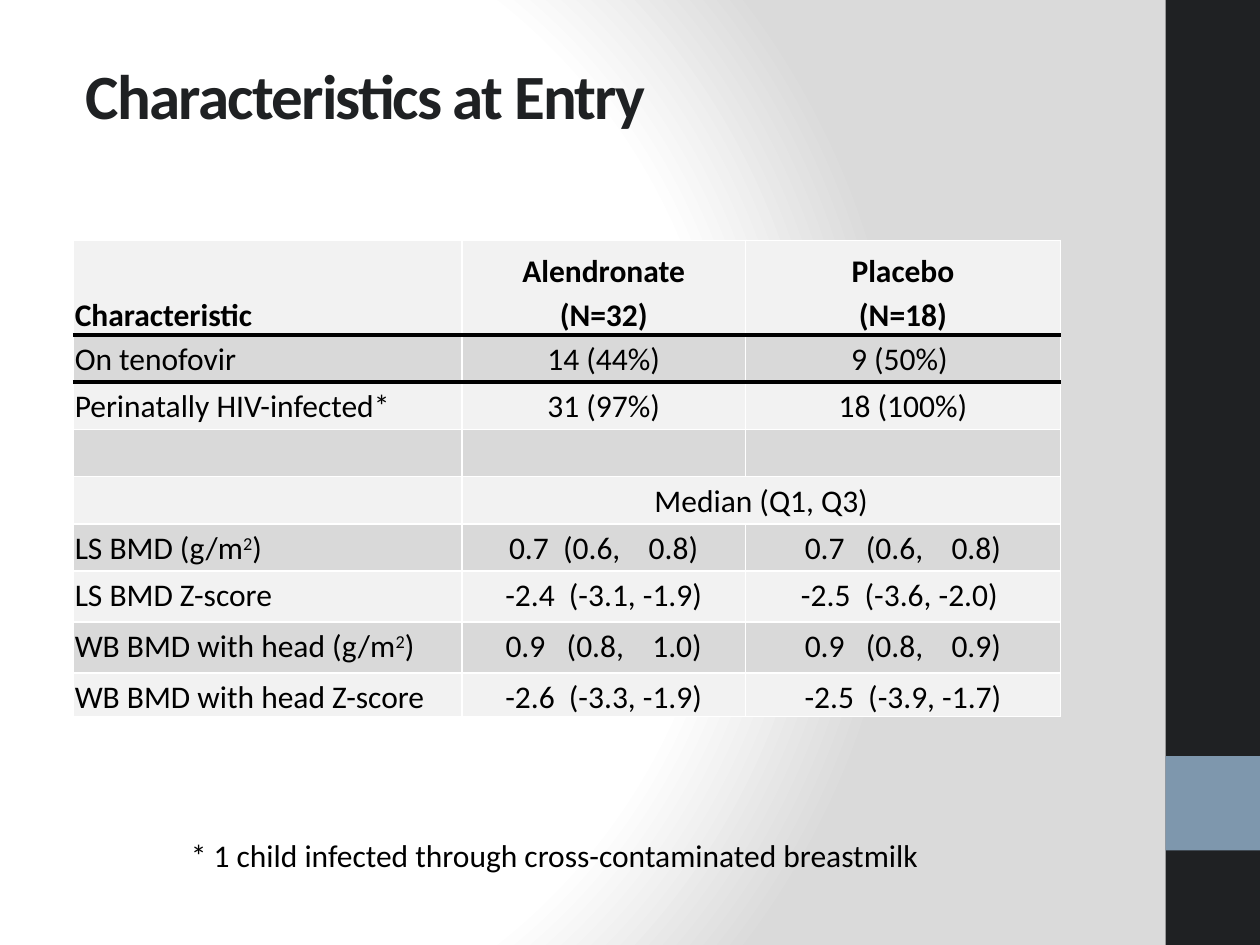
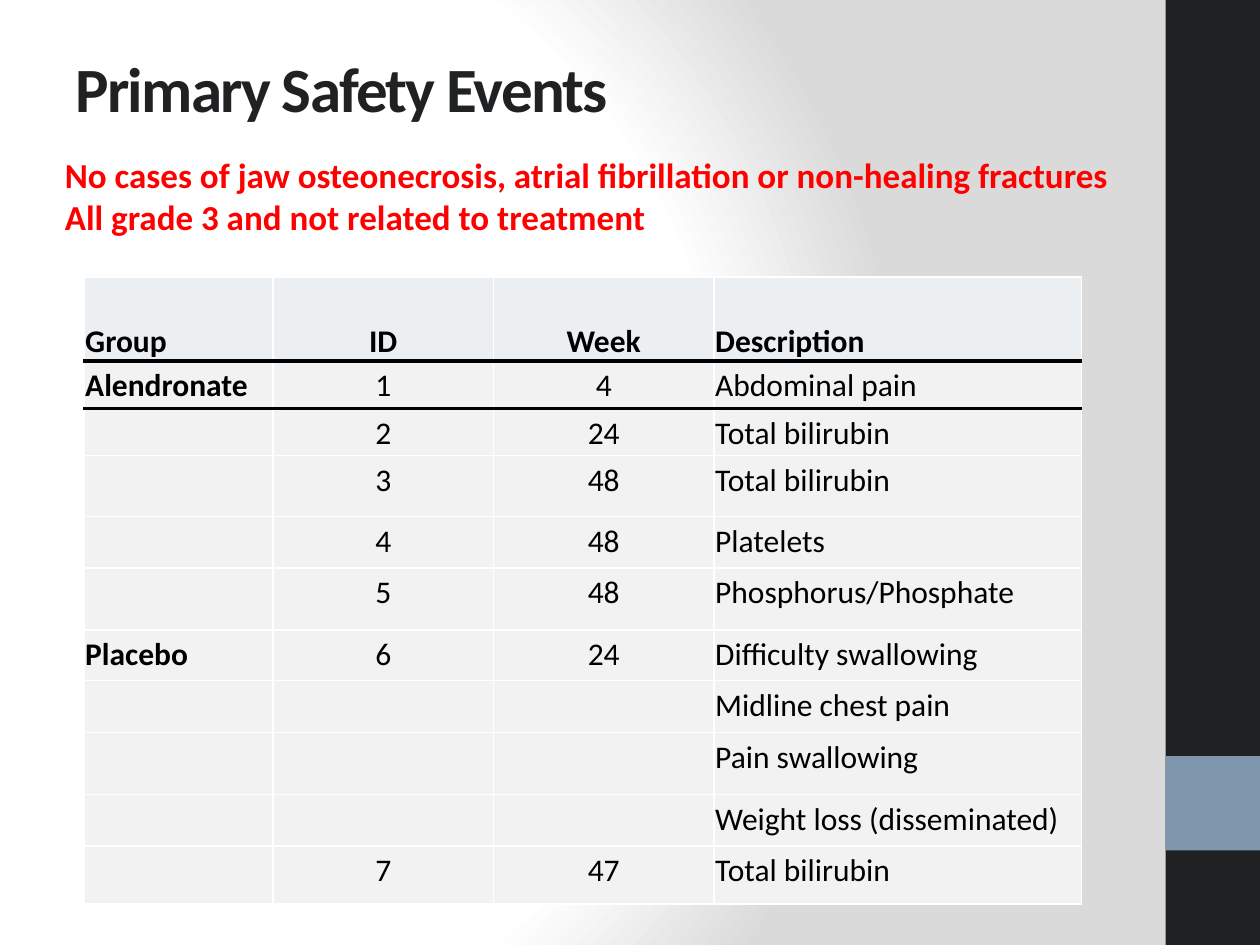
import pptx
import pptx.dml.color
import pptx.enum.shapes
import pptx.enum.text
import pptx.oxml
import pptx.oxml.ns
import pptx.util

RGB = pptx.dml.color.RGBColor
ALIGN = pptx.enum.text.PP_ALIGN
ANCHOR = pptx.enum.text.MSO_ANCHOR

INK = RGB(0x1F, 0x21, 0x23)
STEEL = RGB(0x7E, 0x97, 0xAD)
WHITE = RGB(0xFF, 0xFF, 0xFF)
BLACK = RGB(0x00, 0x00, 0x00)
RED = RGB(0xFF, 0x00, 0x00)
SILVER = RGB(0xDA, 0xDA, 0xDA)
LIGHT_BAND = RGB(0xF2, 0xF2, 0xF2)
DARK_BAND = RGB(0xD9, 0xD9, 0xD9)
PALE_HEADER = RGB(0xEC, 0xEF, 0xF1)

FONT = "Calibri"
GRID_COLUMNS, GRID_ROWS = 120, 90
UNIT = pptx.util.Inches(10) // GRID_COLUMNS

ENTRY_ROWS = [
    ("Characteristic", "Alendronate\n(N=32)", "Placebo\n(N=18)"),
    ("On tenofovir", "14 (44%)", "9 (50%) "),
    ("Perinatally HIV-infected*", "31 (97%)", "18 (100%)"),
    ("", "", ""),
    ("", "Median (Q1, Q3)", ""),
    ("LS BMD (g/m^2^)", "0.7  (0.6,    0.8)", "0.7   (0.6,    0.8)"),
    ("LS BMD Z-score", "-2.4  (-3.1, -1.9)", "-2.5  (-3.6, -2.0) "),
    ("WB BMD with head (g/m^2^)", "0.9   (0.8,    1.0)", "0.9   (0.8,    0.9)"),
    ("WB BMD with head Z-score", "-2.6  (-3.3, -1.9)", "-2.5  (-3.9, -1.7)"),
]

EVENT_ROWS = [
    ("Group", "ID", "Week", "Description"),
    ("Alendronate", "1", "4", "Abdominal pain"),
    ("", "2", "24", "Total bilirubin"),
    ("", "3", "48", "Total bilirubin"),
    ("", "4", "48", "Platelets"),
    ("", "5", "48", "Phosphorus/Phosphate"),
    ("Placebo", "6", "24", "Difficulty swallowing"),
    ("", "", "", "Midline chest pain"),
    ("", "", "", "Pain swallowing"),
    ("", "", "", "Weight loss (disseminated)"),
    ("", "7", "47", "Total bilirubin"),
]


def grid(*units):
    """Convert grid units to slide lengths."""
    return [round(unit * UNIT) for unit in units]


def style_runs(paragraph, size, color, bold=False):
    """Apply the deck font to every run of a paragraph."""
    for run in paragraph.runs:
        run.font.name = FONT
        run.font.size = pptx.util.Pt(size)
        run.font.bold = bold
        run.font.color.rgb = color


def add_text(slide, box, text, size, color, bold=False, wrap=True):
    """Place a text box and return its frame."""
    frame = slide.shapes.add_textbox(*grid(*box)).text_frame
    frame.word_wrap = wrap
    frame.text = text
    for paragraph in frame.paragraphs:
        style_runs(paragraph, size, color, bold)
    return frame


def add_title(slide, box, text):
    """Place a tightly spaced, vertically centred title."""
    frame = add_text(slide, box, text, 36, INK, bold=True)
    frame.vertical_anchor = ANCHOR.MIDDLE
    for run in frame.paragraphs[0].runs:
        run.font._element.set("spc", "-100")


def add_background(slide):
    """Fill the slide with a radial white to silver gradient."""
    slide.background.fill.solid()
    plain = slide.element.xpath(".//p:bgPr/a:solidFill")[0]
    stops = "".join(
        f'<a:gs pos="{share * 1000}"><a:srgbClr val="{color}"/></a:gs>'
        for share, color in ((0, WHITE), (75, WHITE), (100, SILVER))
    )
    gradient = pptx.oxml.parse_xml(
        f'<a:gradFill {pptx.oxml.ns.nsdecls("a")} rotWithShape="1"><a:gsLst>{stops}</a:gsLst>'
        '<a:path path="circle"><a:fillToRect l="20000" t="50000" r="100000" b="50000"/>'
        "</a:path></a:gradFill>"
    )
    plain.getparent().replace(plain, gradient)


def add_side_band(slide, box):
    """Draw the dark side band with its steel square."""
    left, top, width, height = box
    square = (left, top + height * 0.8, width, width)
    for part, color in ((box, INK), (square, STEEL)):
        shape = slide.shapes.add_shape(pptx.enum.shapes.MSO_SHAPE.RECTANGLE, *grid(*part))
        shape.shadow.inherit = False
        shape.fill.solid()
        shape.fill.fore_color.rgb = color
        shape.line.fill.background()


def set_borders(cell, row):
    """Rule a cell in white, with black lines around the first body row."""
    properties = cell._tc.get_or_add_tcPr()
    ruled = {"T": row in (1, 2), "B": row in (0, 1)}
    for position, side in enumerate("LRTB"):
        color, points = (BLACK, 2.25) if ruled.get(side) else (WHITE, 1)
        line = pptx.oxml.parse_xml(
            f'<a:ln{side} {pptx.oxml.ns.nsdecls("a")} w="{pptx.util.Pt(points)}">'
            f'<a:solidFill><a:srgbClr val="{color}"/></a:solidFill></a:ln{side}>'
        )
        properties.insert(position, line)


def fill_cell(cell, text, centred, bold):
    """Write cell text, raising the parts between carets."""
    paragraph = cell.text_frame.paragraphs[0]
    first, *rest = text.split("^")
    paragraph.text = first
    for index, piece in enumerate(rest):
        run = paragraph.add_run()
        run.text = piece
        if index % 2 == 0:
            run.font._element.set("baseline", "30000")
    paragraph.alignment = ALIGN.CENTER if centred else ALIGN.LEFT
    paragraph.line_spacing = 1.15
    paragraph.space_before = paragraph.space_after = pptx.util.Pt(1)
    style_runs(paragraph, 18, BLACK, bold)


def add_ruled_table(slide, origin, columns, heights, rows, centred, header, bands, bold_groups=False):
    """Build a table with a ruled header and repeating row bands."""
    box = (*origin, sum(columns), sum(heights))
    table = slide.shapes.add_table(len(rows), len(columns), *grid(*box)).table
    table.first_row = table.horz_banding = False
    for column, width in zip(table.columns, grid(*columns)):
        column.width = width
    for row, height in zip(table.rows, grid(*heights)):
        row.height = height
    for r, texts in enumerate(rows):
        for c, text in enumerate(texts):
            cell = table.cell(r, c)
            cell.margin_left = cell.margin_right = pptx.util.Inches(0.01)
            cell.margin_top = cell.margin_bottom = 0
            cell.vertical_anchor = ANCHOR.TOP if r else ANCHOR.BOTTOM
            cell.fill.solid()
            cell.fill.fore_color.rgb = bands[r % len(bands)] if r else header
            set_borders(cell, r)
            fill_cell(cell, text, c in centred, r == 0 or (bold_groups and c == 0))
    return table


def add_base_slide(deck):
    """Add a blank slide with the shared background and side band."""
    slide = deck.slides.add_slide(deck.slide_layouts[6])
    add_background(slide)
    add_side_band(slide, (111, 0, 9, GRID_ROWS))
    return slide


def add_entry_slide(deck):
    """Build the slide on characteristics at entry."""
    slide = add_base_slide(deck)
    add_title(slide, (7, 3, 99, 12), "Characteristics at Entry")
    heights = [9] + [4.5] * 5 + [4.85] * 2 + [4]
    table = add_ruled_table(
        slide, (7, 22.9), (37, 27, 30), heights, ENTRY_ROWS,
        centred=(1, 2), header=LIGHT_BAND, bands=(LIGHT_BAND, DARK_BAND),
    )
    table.cell(4, 1).merge(table.cell(4, 2))
    footnote = "* 1 child infected through cross-contaminated breastmilk"
    add_text(slide, (17, 79, 71.8, 4.8), footnote, 18, BLACK, wrap=False)


def add_safety_slide(deck):
    """Build the slide on primary safety events."""
    slide = add_base_slide(deck)
    add_title(slide, (6, 3.6, 98, 9.4), "Primary Safety Events")
    heights = (8, 4.5, 4.5, 5.8, 4.9, 5.9, 4.8, 5, 5.9, 4.9, 5.5)
    add_ruled_table(
        slide, (8, 26.4), (18, 21, 21, 35), heights, EVENT_ROWS,
        centred=(1, 2), header=PALE_HEADER, bands=(LIGHT_BAND,), bold_groups=True,
    )
    summary = (
        "No cases of jaw osteonecrosis, atrial fibrillation or non-healing fractures\n"
        "All grade 3 and not related to treatment"
    )
    add_text(slide, (5, 14, 102, 9.2), summary, 20, RED, bold=True)


def main():
    """Assemble and save the deck."""
    deck = pptx.Presentation()
    deck.slide_width, deck.slide_height = grid(GRID_COLUMNS, GRID_ROWS)
    add_entry_slide(deck)
    add_safety_slide(deck)
    deck.save("out.pptx")


if __name__ == "__main__":
    main()
